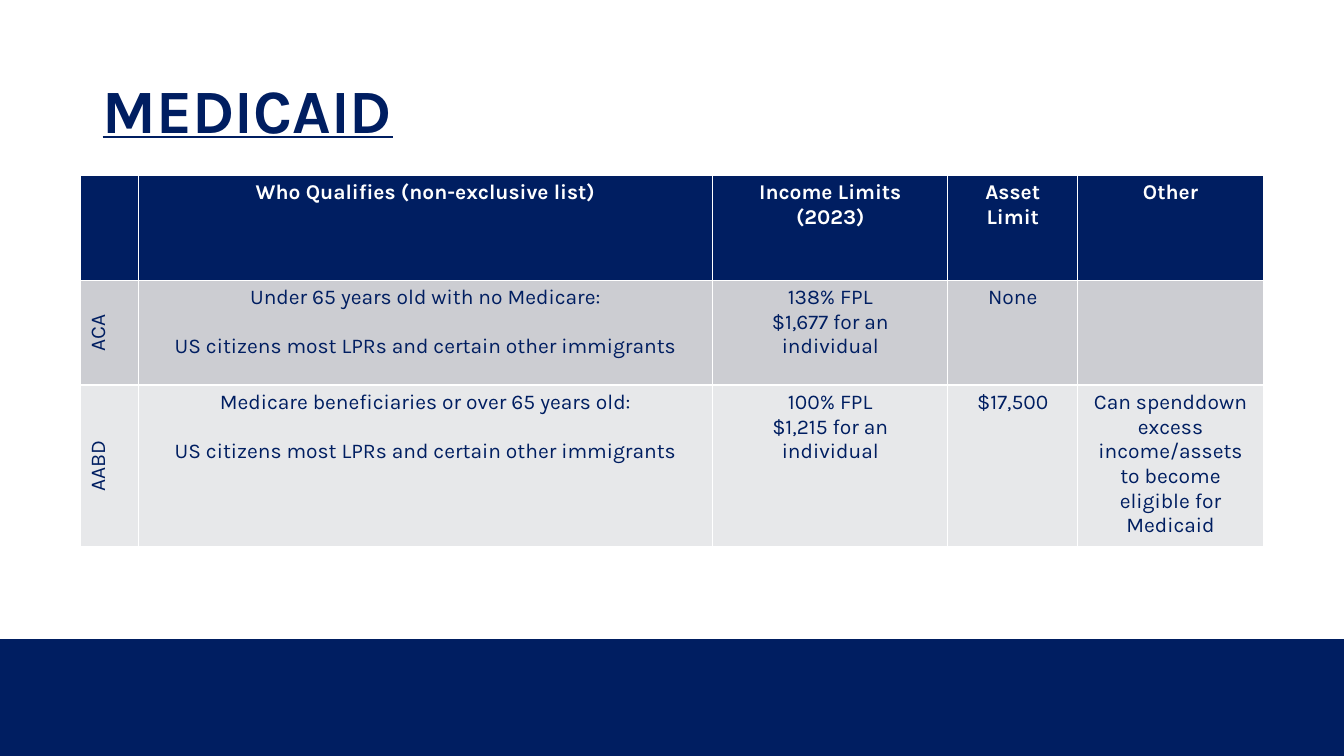
from pptx import Presentation
from pptx.dml.color import RGBColor
from pptx.enum.shapes import MSO_SHAPE
from pptx.enum.text import MSO_ANCHOR, PP_ALIGN
from pptx.util import Inches, Pt

NAVY, WHITE = "001E61", "FFFFFF"
ROW_FILLS = [NAVY, "CCCDD2", "E7E8EA"]
COLUMN_WIDTHS = [0.57, 5.7, 2.33, 1.29, 1.84]
ROW_HEIGHTS = [1.04, 1.04, 1.48]
IMMIGRATION_RULE = "US citizens most LPRs and certain other immigrants"
PROGRAMS = [
    ["", "Who Qualifies (non-exclusive list)", "Income Limits (2023)", "Asset Limit", "Other"],
    ["ACA", f"Under 65 years old with no Medicare:\n{IMMIGRATION_RULE}",
     "138% FPL\n$1,677 for an individual", "None", ""],
    ["AABD", f"Medicare beneficiaries or over 65 years old:\n{IMMIGRATION_RULE}",
     "100% FPL\n$1,215 for an individual", "$17,500",
     "Can spenddown excess income/assets to become eligible for Medicaid"],
]


def rgb(color):
    return RGBColor.from_string(color)


def set_font(paragraph, color, **format_values):
    paragraph.font.color.rgb = rgb(color)
    for attribute, value in {"name": "Karla", **format_values}.items():
        setattr(paragraph.font, attribute, value)


prs = Presentation()
prs.slide_width, prs.slide_height = Inches(13.33), Inches(7.5)
slide = prs.slides.add_slide(prs.slide_layouts[6])

footer = slide.shapes.add_shape(
    MSO_SHAPE.RECTANGLE, 0, Inches(6.34), prs.slide_width, Inches(1.16))
footer.shadow.inherit = False
footer.fill.solid()
footer.fill.fore_color.rgb = rgb(NAVY)
footer.line.fill.background()

title = slide.shapes.add_textbox(
    Inches(0.92), Inches(0.4), Inches(11.5), Inches(1.45)).text_frame
title.word_wrap = True
title.vertical_anchor = MSO_ANCHOR.MIDDLE
heading = title.paragraphs[0]
heading.text = "MEDICAID"
heading.line_spacing = 0.9
set_font(heading, NAVY, size=Pt(44), bold=True, underline=True)

# The default table style supplies the white grid and the thicker header rule.
programs = slide.shapes.add_table(
    len(ROW_HEIGHTS), len(COLUMN_WIDTHS), Inches(0.8), Inches(1.74),
    Inches(sum(COLUMN_WIDTHS)), Inches(sum(ROW_HEIGHTS))).table
for column, width in zip(programs.columns, COLUMN_WIDTHS):
    column.width = Inches(width)

for r, (row, height, fill, texts) in enumerate(
        zip(programs.rows, ROW_HEIGHTS, ROW_FILLS, PROGRAMS)):
    row.height = Inches(height)
    is_header = r == 0
    for c, (cell, text) in enumerate(zip(row.cells, texts)):
        cell.fill.solid()
        cell.fill.fore_color.rgb = rgb(fill)
        cell.text = text
        if c == 0 and not is_header:
            cell._tc.get_or_add_tcPr().set("vert", "vert270")
        for p, paragraph in enumerate(cell.text_frame.paragraphs):
            paragraph.alignment = PP_ALIGN.CENTER
            if c == 1 and p > 0:
                paragraph.space_before = Pt(17.5)
            set_font(paragraph, WHITE if is_header else NAVY, size=Pt(15), bold=is_header)

prs.save("out.pptx")
